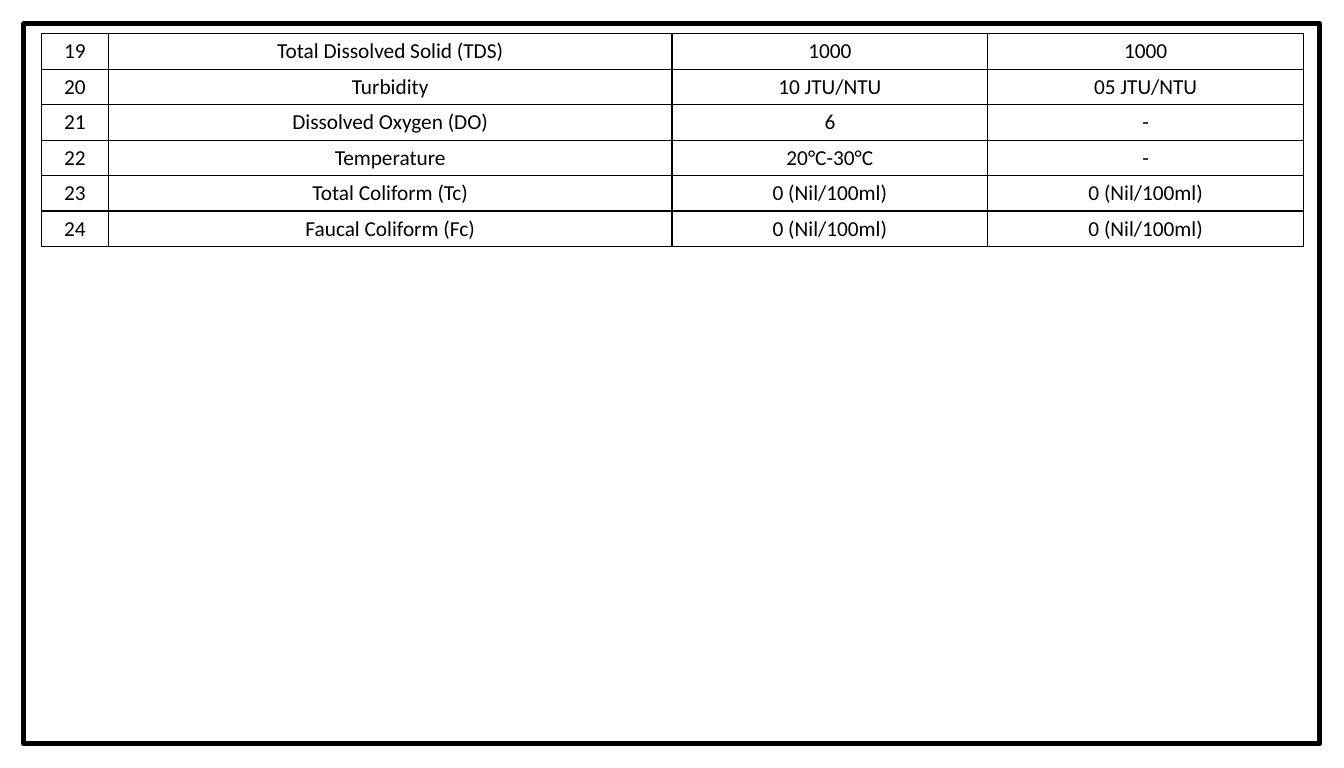
from dataclasses import dataclass

from lxml import etree
from pptx import Presentation
from pptx import util as u
from pptx.dml.color import RGBColor
from pptx.enum import shapes, text
from pptx.oxml.ns import qn


@dataclass(frozen=True)
class Theme:
    ink: str = "000000"
    font: str = "Calibri"
    body_size: float = 16
    frame_width: float = 3.75
    rule_width: float = 1


class SlideBuilder:
    def __init__(self, page, theme):
        self.page = page
        self.theme = theme
        self.ink = RGBColor.from_string(theme.ink)

    def frame(self, left, top, width, height):
        box = self.page.shapes.add_shape(
            shapes.MSO_SHAPE.RECTANGLE,
            u.Inches(left), u.Inches(top), u.Inches(width), u.Inches(height))
        box.shadow.inherit = False
        box.fill.background()
        box.line.color.rgb = self.ink
        box.line.width = u.Pt(self.theme.frame_width)

    def table(self, left, top, column_widths, row_height, rows):
        table = self.page.shapes.add_table(
            len(rows), len(column_widths), u.Inches(left), u.Inches(top),
            u.Inches(sum(column_widths)), u.Inches(row_height * len(rows))).table
        table.first_row = False
        table.horz_banding = False
        for column, width in zip(table.columns, column_widths):
            column.width = u.Inches(width)
        for row, values in zip(table.rows, rows):
            row.height = u.Inches(row_height)
            for cell, value in zip(row.cells, values):
                self.cell(cell, value)

    def cell(self, cell, value):
        cell.margin_top = cell.margin_bottom = u.Inches(0.03)
        cell.vertical_anchor = text.MSO_ANCHOR.MIDDLE
        self.borders(cell)
        cell.fill.background()
        cell.text = value
        para = cell.text_frame.paragraphs[0]
        para.alignment = text.PP_ALIGN.CENTER
        para.font.name = self.theme.font
        para.font.size = u.Pt(self.theme.body_size)
        para.font.color.rgb = self.ink

    def borders(self, cell):
        properties = cell._tc.get_or_add_tcPr()
        for side in ("a:lnL", "a:lnR", "a:lnT", "a:lnB"):
            line = etree.SubElement(
                properties, qn(side), w=str(u.Pt(self.theme.rule_width)))
            fill = etree.SubElement(line, qn("a:solidFill"))
            etree.SubElement(fill, qn("a:srgbClr"), val=self.theme.ink)


def main():
    deck = Presentation()
    deck.slide_width = u.Inches(14)
    deck.slide_height = u.Inches(8)
    page = deck.slides.add_slide(deck.slide_layouts[6])
    builder = SlideBuilder(page, Theme())

    water_standards = [
        ("19", "Total Dissolved Solid (TDS)", "1000", "1000"),
        ("20", "Turbidity", "10 JTU/NTU", "05 JTU/NTU"),
        ("21", "Dissolved Oxygen (DO)", "6", "-"),
        ("22", "Temperature", "20°C-30°C", "-"),
        ("23", "Total Coliform (Tc)", "0 (Nil/100ml)", "0 (Nil/100ml)"),
        ("24", "Faucal Coliform (Fc)", "0 (Nil/100ml)", "0 (Nil/100ml)"),
    ]
    builder.frame(0.25, 0.25, 13.5, 7.5)
    builder.table(0.43, 0.35, (0.7, 5.87, 3.29, 3.29), 0.37, water_standards)
    deck.save("out.pptx")


if __name__ == "__main__":
    main()
